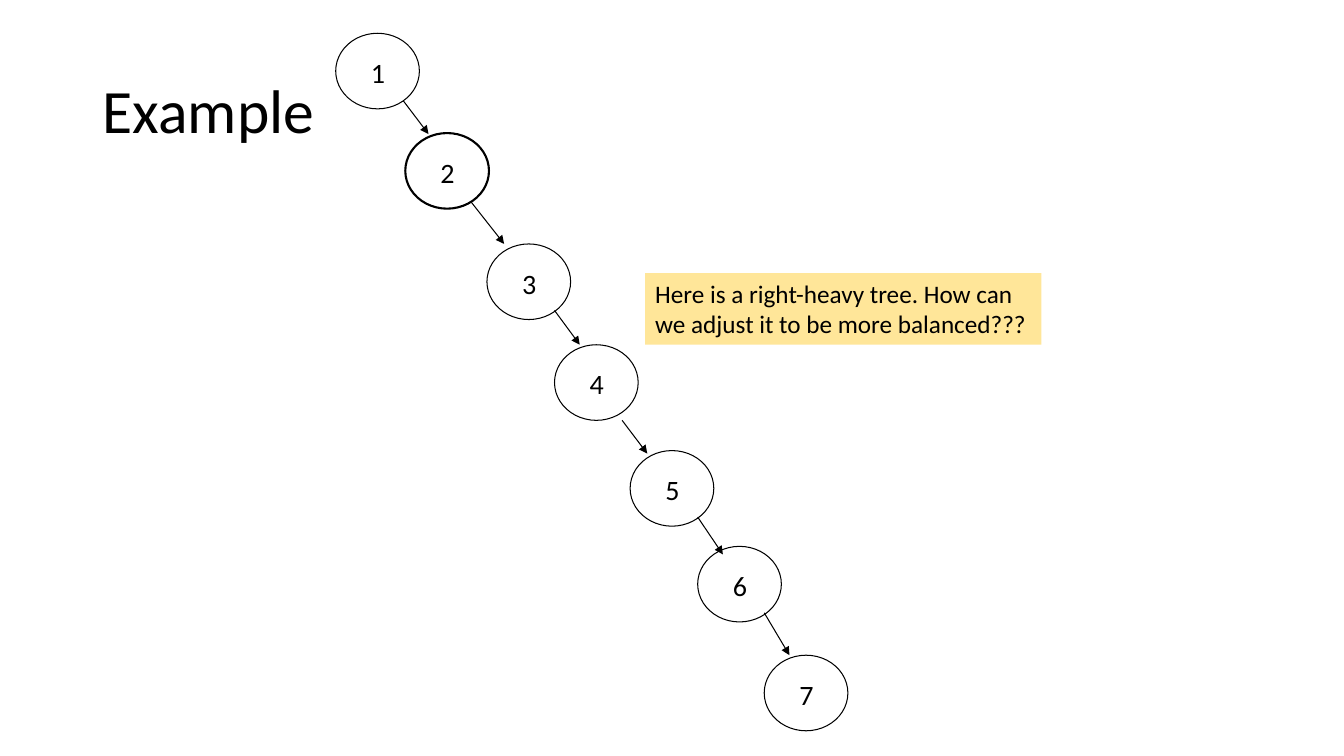
from pptx import Presentation
from pptx.dml.color import RGBColor
from pptx.enum.shapes import MSO_CONNECTOR, MSO_SHAPE
from pptx.enum.text import MSO_ANCHOR, PP_ALIGN
from pptx.oxml.ns import qn
from pptx.util import Inches, Pt
from lxml import etree

OVAL = MSO_SHAPE.OVAL
RECTANGLE = MSO_SHAPE.RECTANGLE
STRAIGHT = MSO_CONNECTOR.STRAIGHT
LEFT = PP_ALIGN.LEFT
TOP = MSO_ANCHOR.TOP
MIDDLE = MSO_ANCHOR.MIDDLE

COLORS = {"ink": "000000", "note": "FFE699"}
FONT = "Calibri"
NODE_WIDTH, NODE_HEIGHT = 0.83, 0.75
KEY_LABEL_DX, KEY_LABEL_DY = 0.25, 0.17

nodes = [
    (3.33, 0.33, 0.75),
    (4.02, 1.32, 1.5),
    (4.83, 2.42, 0.75),
    (5.5, 3.42, 0.75),
    (6.25, 4.47, 0.75),
    (6.92, 5.42, 0.75),
    (7.58, 6.5, 0.75),
]
child_links = [
    (4, 1, 4.25, 1.33),
    (4.67, 2, 5, 2.42),
    (5.5, 3.08, 5.75, 3.42),
    (6.17, 4.17, 6.42, 4.5),
    (6.92, 5.13, 7.17, 5.5),
    (7.58, 6.08, 7.83, 6.5),
]


def color(name):
    return RGBColor.from_string(COLORS[name])


def write(shape, lines, size, anchor=TOP, wrap=False, spacing=None):
    frame = shape.text_frame
    frame.text = "\n".join(lines)
    frame.word_wrap = wrap
    frame.vertical_anchor = anchor
    for paragraph in frame.paragraphs:
        paragraph.alignment = LEFT
        paragraph.line_spacing = spacing
        for run in paragraph.runs:
            run.font.name = FONT
            run.font.size = Pt(size)
            run.font.color.rgb = color("ink")


prs = Presentation()
prs.slide_width = Inches(13.33)
prs.slide_height = Inches(7.5)
slide = prs.slides.add_slide(prs.slide_layouts[6])
shapes = slide.shapes

title = shapes.add_textbox(Inches(0.92), Inches(0.4), Inches(11.5), Inches(1.45))
write(title, ["Example"], 44, anchor=MIDDLE, wrap=True, spacing=0.9)

for key, (x, y, outline) in enumerate(nodes, start=1):
    node = shapes.add_shape(
        OVAL, Inches(x), Inches(y), Inches(NODE_WIDTH), Inches(NODE_HEIGHT))
    node.shadow.inherit = False
    node.fill.background()
    node.line.color.rgb = color("ink")
    node.line.width = Pt(outline)

    key_label = shapes.add_textbox(
        Inches(x + KEY_LABEL_DX), Inches(y + KEY_LABEL_DY), Inches(0.34), Inches(0.44))
    write(key_label, [str(key)], 20)

for x1, y1, x2, y2 in child_links:
    link = shapes.add_connector(STRAIGHT, Inches(x1), Inches(y1), Inches(x2), Inches(y2))
    link.line.color.rgb = color("ink")
    link.line.width = Pt(0.75)
    etree.SubElement(link.line._get_or_add_ln(), qn("a:tailEnd"), type="triangle")
    etree.SubElement(link._element.spPr, qn("a:effectLst"))

question = shapes.add_shape(
    RECTANGLE, Inches(6.4), Inches(2.71), Inches(3.93), Inches(0.71))
question.shadow.inherit = False
question.fill.solid()
question.fill.fore_color.rgb = color("note")
question.line.fill.background()
write(question, ["Here is a right-heavy tree. How can",
                 "we adjust it to be more balanced???"], 18)

prs.save("out.pptx")
